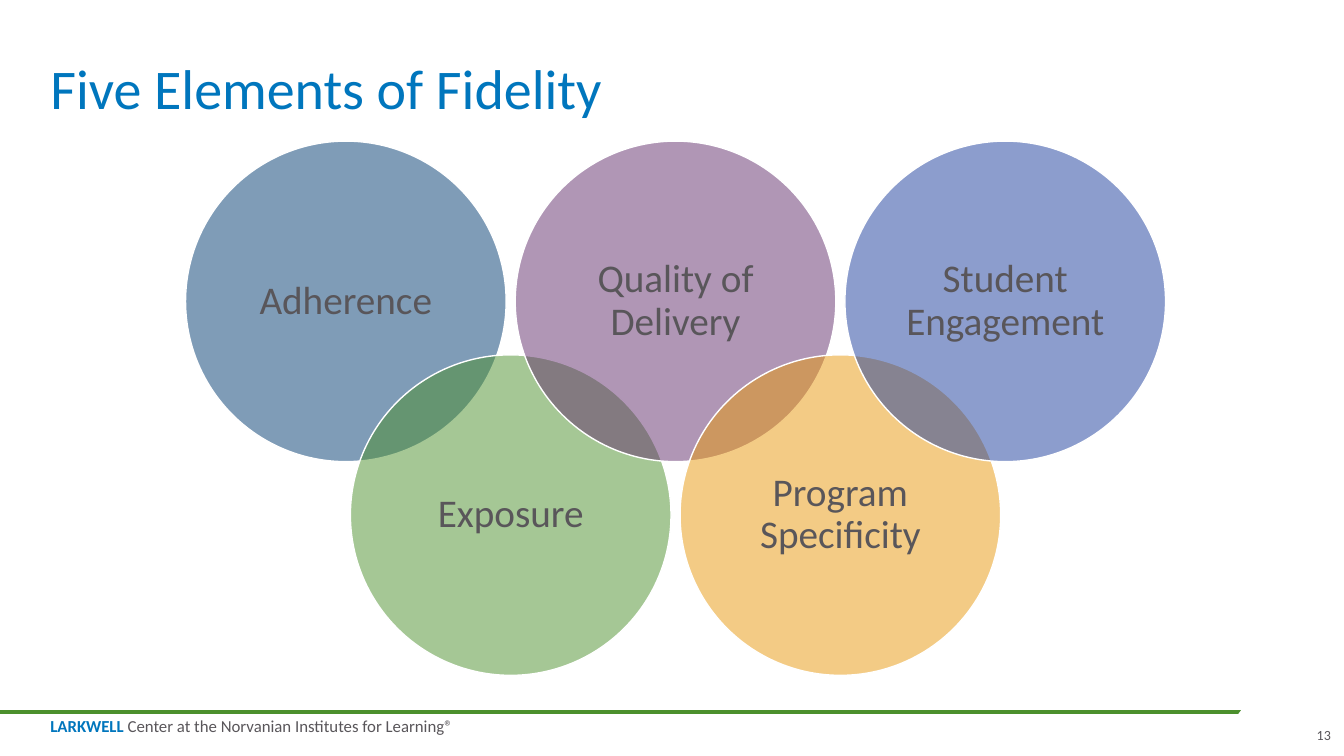
from dataclasses import dataclass

from lxml.etree import SubElement
from pptx import Presentation
from pptx.dml.color import RGBColor
from pptx.enum.shapes import MSO_CONNECTOR, MSO_SHAPE
from pptx.enum.text import MSO_ANCHOR, PP_ALIGN
from pptx.oxml.ns import qn
from pptx.util import Inches, Pt

# Content
TITLE = "Five Elements of Fidelity"
ELEMENTS = [
    ("Adherence", "003A70"),
    ("Exposure", "4C902D"),
    ("Quality of Delivery", "622E6C"),
    ("Program Specificity", "E8980C"),
    ("Student Engagement", "1B3D9D"),
]
FOOTER = [("LARKWELL", True), (" Center at the Norvanian Institutes for Learning®", False)]
PAGE = "13"


@dataclass(frozen=True)
class Theme:
    font: str = "Calibri"
    blue: str = "0076BD"
    gray: str = "59565A"
    green: str = "4C902D"
    white: str = "FFFFFF"
    title: int = 40
    label: int = 28
    footer: int = 12
    page: int = 10


theme = Theme()
DIAMETER, LEFT, STEP = 3.18, 1.84, 1.635
ROWS = (1.4, 3.52)


def rgb(color):
    return RGBColor.from_string(color)


def style(r, size, color, bold=False):
    r.font.name, r.font.size, r.font.bold = theme.font, Pt(size), bold
    r.font.color.rgb = rgb(color)


def set_frame(tf, anchor, inset=0, wrap=True):
    tf.word_wrap, tf.vertical_anchor = wrap, anchor
    tf.margin_left = tf.margin_right = tf.margin_top = tf.margin_bottom = Inches(inset)


def add_ellipse(slide, left, top, width, height, color):
    sp = slide.shapes.add_shape(
        MSO_SHAPE.OVAL, Inches(left), Inches(top), Inches(width), Inches(height))
    sp.shadow.inherit = False
    sp.fill.solid()
    sp.fill.fore_color.rgb = rgb(color)
    return sp


def add_text(slide, left, top, width, height, anchor):
    box = slide.shapes.add_textbox(Inches(left), Inches(top), Inches(width), Inches(height))
    set_frame(box.text_frame, anchor, wrap=False)
    return box.text_frame.paragraphs[0]


def add_footer(slide):
    # Green rule, with its right end trimmed by a tilted white ellipse
    rule = slide.shapes.add_connector(
        MSO_CONNECTOR.STRAIGHT, 0, Inches(7.06), Inches(13), Inches(7.06))
    rule.line.color.rgb, rule.line.width = rgb(theme.green), Pt(3)
    SubElement(rule._element.spPr, qn("a:effectLst"))
    trim = add_ellipse(slide, 12.16, 6.77, 1.19, 0.58, theme.white)
    trim.line.fill.background()
    trim.rotation = 332.1

    # Organization name
    p = add_text(slide, 0.5, 7.13, 4.02, 0.17, MSO_ANCHOR.TOP)
    p.line_spacing = 0.85
    for text, bold in FOOTER:
        r = p.add_run()
        r.text = text
        style(r, theme.footer, theme.blue if bold else theme.gray, bold)

    # Page number
    p = add_text(slide, 13.03, 7.2, 0.17, 0.17, MSO_ANCHOR.BOTTOM)
    p.text, p.alignment = PAGE, PP_ALIGN.RIGHT
    style(p.runs[0], theme.page, theme.gray)


def add_title(slide):
    title = slide.shapes.title
    title.left, title.top, title.width, title.height = map(Inches, (0.5, 0, 12.4, 1.21))
    title.text_frame.text = TITLE
    set_frame(title.text_frame, MSO_ANCHOR.BOTTOM)
    p = title.text_frame.paragraphs[0]
    p.alignment, p.line_spacing = PP_ALIGN.LEFT, 0.9
    style(p.runs[0], theme.title, theme.blue)


def add_circles(slide):
    # Circles alternate between the upper and the lower row
    for i, (label, color) in enumerate(ELEMENTS):
        sp = add_ellipse(slide, LEFT + i * STEP, ROWS[i % 2], DIAMETER, DIAMETER, color)
        alpha = SubElement(sp.fill._xPr.find(qn("a:solidFill"))[0], qn("a:alpha"))
        alpha.set("val", "50000")
        sp.line.color.rgb, sp.line.width = rgb(theme.white), Pt(1)
        sp.text_frame.text = label
        set_frame(sp.text_frame, MSO_ANCHOR.MIDDLE, inset=0.12)
        p = sp.text_frame.paragraphs[0]
        p.alignment, p.line_spacing = PP_ALIGN.CENTER, 0.9
        style(p.runs[0], theme.label, theme.gray)


def main():
    prs = Presentation()
    prs.slide_width, prs.slide_height = Inches(13.33), Inches(7.5)
    slide = prs.slides.add_slide(prs.slide_layouts[5])
    add_footer(slide)
    add_title(slide)
    add_circles(slide)
    prs.save("out.pptx")


if __name__ == "__main__":
    main()
